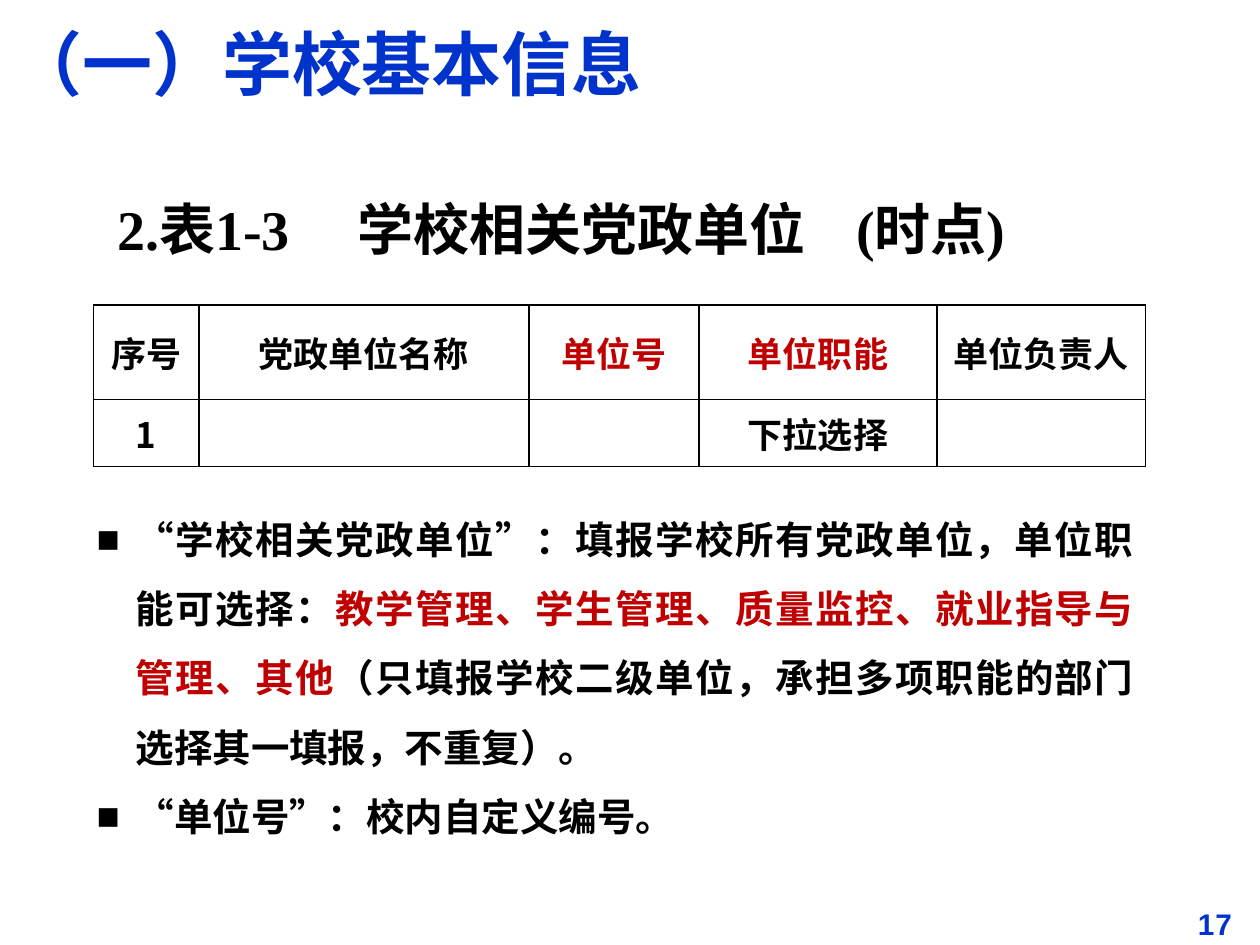
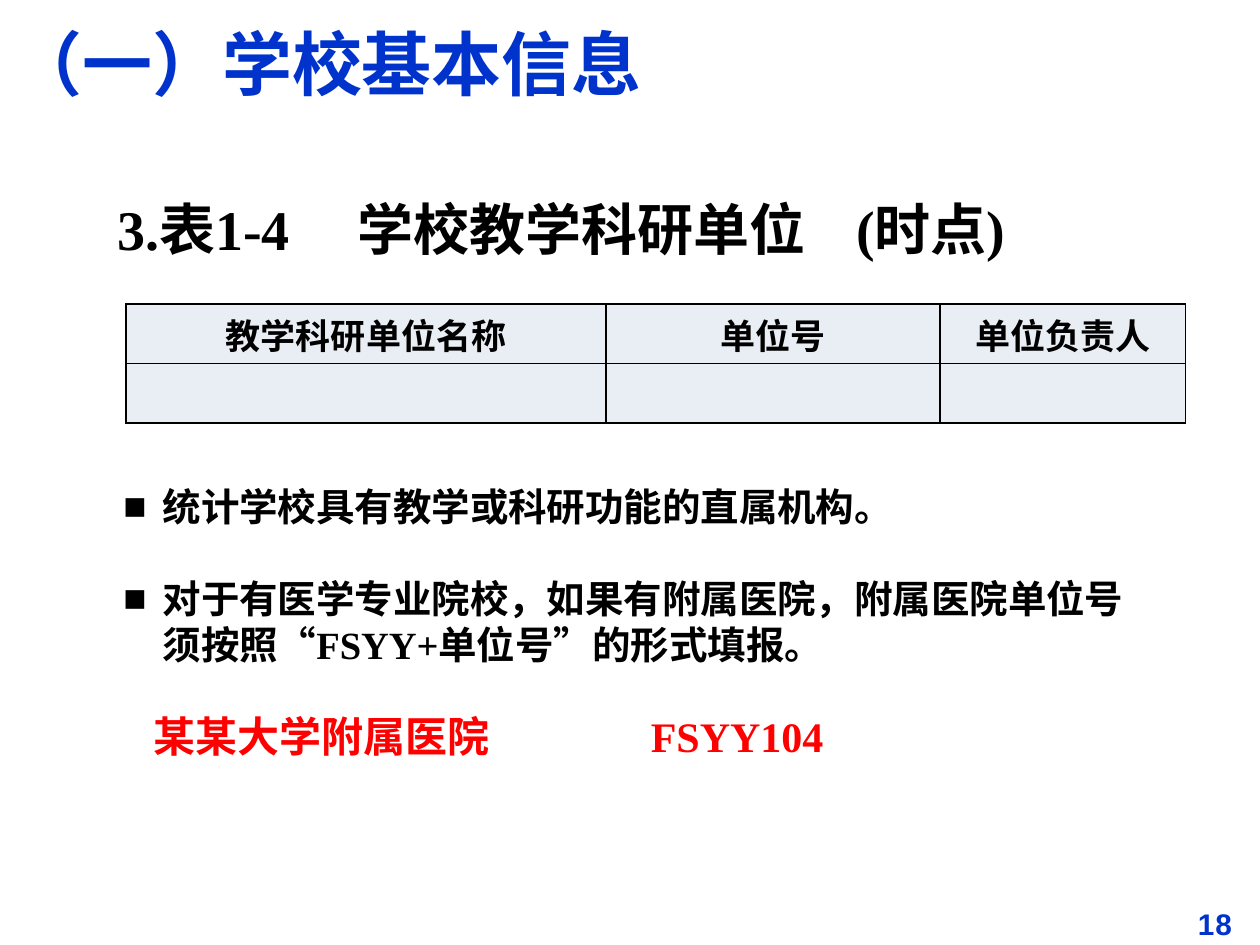
from collections import namedtuple

from lxml.etree import SubElement
from pptx import Presentation
from pptx.dml.color import RGBColor
from pptx.enum.lang import MSO_LANGUAGE_ID as Language
from pptx.enum.text import MSO_ANCHOR as Anchor, PP_ALIGN as Align
from pptx.oxml import parse_xml
from pptx.oxml.ns import nsdecls, qn
from pptx.util import Cm, Pt

BLUE = RGBColor(0x00, 0x33, 0xCC)
BLACK = RGBColor(0x00, 0x00, 0x00)
DARK_RED = RGBColor(0xC0, 0x00, 0x00)
RED = RGBColor(0xFF, 0x00, 0x00)
WHITE = RGBColor(0xFF, 0xFF, 0xFF)
PALE_BLUE = RGBColor(0xE9, 0xED, 0xF4)

SERIF, SANS, TABLE_FONT = "Times New Roman", "Arial", "Calibri"
CHINESE_FONT = "Noto Sans CJK SC"
LINE_HEIGHT = 1.2  # line pitch as a multiple of the text size
BULLET_INDENT = Cm(0.79)

# All boxes are in centimetres
Box = namedtuple("Box", "left top width height")
SLIDE = Box(0, 0, 25.4, 19.05)
TITLE = "（一）学校基本信息"


def lengths(box):
    return [Cm(value) for value in box]


# Text
def add_run(paragraph, text, size, color, font=SERIF):
    run = paragraph.add_run()
    run.text = text
    run.font.name = font
    run.font.size = Pt(size)
    run.font.bold = True
    run.font.color.rgb = color
    run.font.language_id = Language.SIMPLIFIED_CHINESE
    properties = run.font._element
    SubElement(properties, qn("a:ea"), typeface=CHINESE_FONT)
    return run


def add_text_frame(slide, box, anchor=Anchor.TOP):
    frame = slide.shapes.add_textbox(*lengths(box)).text_frame
    frame.word_wrap = True
    frame.vertical_anchor = anchor
    frame.margin_top = Cm(0.2)
    return frame


def add_line(slide, box, text, size, color, tabs=(), font=SERIF, anchor=Anchor.TOP):
    paragraph = add_text_frame(slide, box, anchor).paragraphs[0]
    if tabs:
        tab_list = SubElement(paragraph._p.get_or_add_pPr(), qn("a:tabLst"))
        for position in tabs:
            SubElement(tab_list, qn("a:tab"), pos=str(Cm(position)), algn="l")
    paragraph.line_spacing = Pt(size * LINE_HEIGHT)
    return add_run(paragraph, text, size, color, font)


def add_bullets(slide, box, items, spacing=1.0, gap=0, align=Align.LEFT, size=22):
    """Each item is a list of (text, color) runs."""
    frame = add_text_frame(slide, box)
    for index, runs in enumerate(items):
        paragraph = frame.add_paragraph() if index else frame.paragraphs[0]
        properties = paragraph._p.get_or_add_pPr()
        properties.set("marL", str(BULLET_INDENT))
        properties.set("indent", str(-BULLET_INDENT))
        SubElement(properties, qn("a:buFont"), typeface=SANS)
        SubElement(properties, qn("a:buChar"), char="■")
        paragraph.alignment = align
        paragraph.line_spacing = Pt(size * LINE_HEIGHT * spacing)
        if index and gap:
            paragraph.space_before = Pt(gap)
        for text, color in runs:
            add_run(paragraph, text, size, color)


# Tables
def set_borders(cell, top_width=1):
    properties = cell._tc.get_or_add_tcPr()
    for side, width in (("L", 1), ("R", 1), ("T", top_width), ("B", 1)):
        properties.append(parse_xml(
            f'<a:ln{side} {nsdecls("a")} w="{Pt(width)}"><a:solidFill>'
            f'<a:srgbClr val="{BLACK}"/></a:solidFill></a:ln{side}>'))


def add_form_table(slide, box, columns, row_heights, rows, fill,
                   anchor=Anchor.TOP, top_width=1, highlighted=()):
    table = slide.shapes.add_table(len(rows), len(columns), *lengths(box)).table
    table.first_row = table.horz_banding = False
    for column, width in zip(table.columns, columns):
        column.width = Cm(width)
    for row, height in zip(table.rows, row_heights):
        row.height = Cm(height)
    for row_index, texts in enumerate(rows):
        for column_index, text in enumerate(texts):
            cell = table.cell(row_index, column_index)
            set_borders(cell, 1 if row_index else top_width)
            cell.fill.solid()
            cell.fill.fore_color.rgb = fill
            cell.vertical_anchor = anchor
            cell.margin_left = cell.margin_right = Cm(0.18)
            cell.margin_top = cell.margin_bottom = Cm(0.1)
            if text:
                paragraph = cell.text_frame.paragraphs[0]
                paragraph.alignment = Align.CENTER
                add_run(paragraph, text, 20,
                        DARK_RED if text in highlighted else BLACK,
                        CHINESE_FONT if text.isdigit() else TABLE_FONT)


# Parts every slide shares
def add_base_slide(presentation, number, heading):
    slide = presentation.slides.add_slide(presentation.slide_layouts[6])
    number_box = Box(SLIDE.width - 1.5, SLIDE.height - 0.98, 1.5, 0.98)
    number_run = add_line(slide, number_box, str(number), 17, BLUE, font=SANS)
    number_run.font._element.set("spc", "50")
    add_line(slide, Box(0, 0.33, 20.8, 1.8), TITLE, 40, BLUE, anchor=Anchor.MIDDLE)
    add_line(slide, Box(2.11, 3.73, 19.6, 1.63), heading, 32, BLACK, tabs=(4.85, 14.9))
    return slide


def add_party_units_slide(presentation):
    slide = add_base_slide(presentation, 17, "2.表1-3\t学校相关党政单位\t(时点)")
    add_form_table(
        slide, Box(1.88, 6.15, 21.21, 3.26),
        columns=(2.13, 6.65, 3.43, 4.8, 4.2), row_heights=(1.9, 1.35),
        rows=(("序号", "党政单位名称", "单位号", "单位职能", "单位负责人"),
              ("1", "", "", "下拉选择", "")),
        fill=WHITE, anchor=Anchor.MIDDLE, top_width=1.5,
        highlighted=("单位号", "单位职能"))
    add_bullets(
        slide, Box(1.7, 9.73, 21.41, 7.32),
        [[("“学校相关党政单位”：填报学校所有党政单位，单位职能可选择：", BLACK),
          ("教学管理、学生管理、质量监控、就业指导与管理、其他", DARK_RED),
          ("（只填报学校二级单位，承担多项职能的部门选择其一填报，不重复）。", BLACK)],
         [("“单位号”：校内自定义编号。", BLACK)]],
        spacing=1.5, align=Align.JUSTIFY)


def add_research_units_slide(presentation):
    slide = add_base_slide(presentation, 18, "3.表1-4\t学校教学科研单位\t(时点)")
    add_form_table(
        slide, Box(2.54, 6.13, 21.36, 2.4),
        columns=(9.68, 6.73, 4.95), row_heights=(1.2, 1.2),
        rows=(("教学科研单位名称", "单位号", "单位负责人"), ("", "", "")),
        fill=PALE_BLUE)
    add_bullets(
        slide, Box(2.24, 9.53, 21.41, 4.01),
        [[("统计学校具有教学或科研功能的直属机构。", BLACK)],
         [("对于有医学专业院校，如果有附属医院，附属医院单位号"
           "须按照“FSYY+单位号”的形式填报。", BLACK)]],
        gap=26.4)
    # Example of a hospital's unit number
    add_line(slide, Box(2.84, 14.12, 18.08, 1.27), "某某大学附属医院\tFSYY104",
             24, RED, tabs=(10.03,))


def main():
    presentation = Presentation()
    presentation.slide_width = Cm(SLIDE.width)
    presentation.slide_height = Cm(SLIDE.height)
    add_party_units_slide(presentation)
    add_research_units_slide(presentation)
    presentation.save("out.pptx")


if __name__ == "__main__":
    main()
